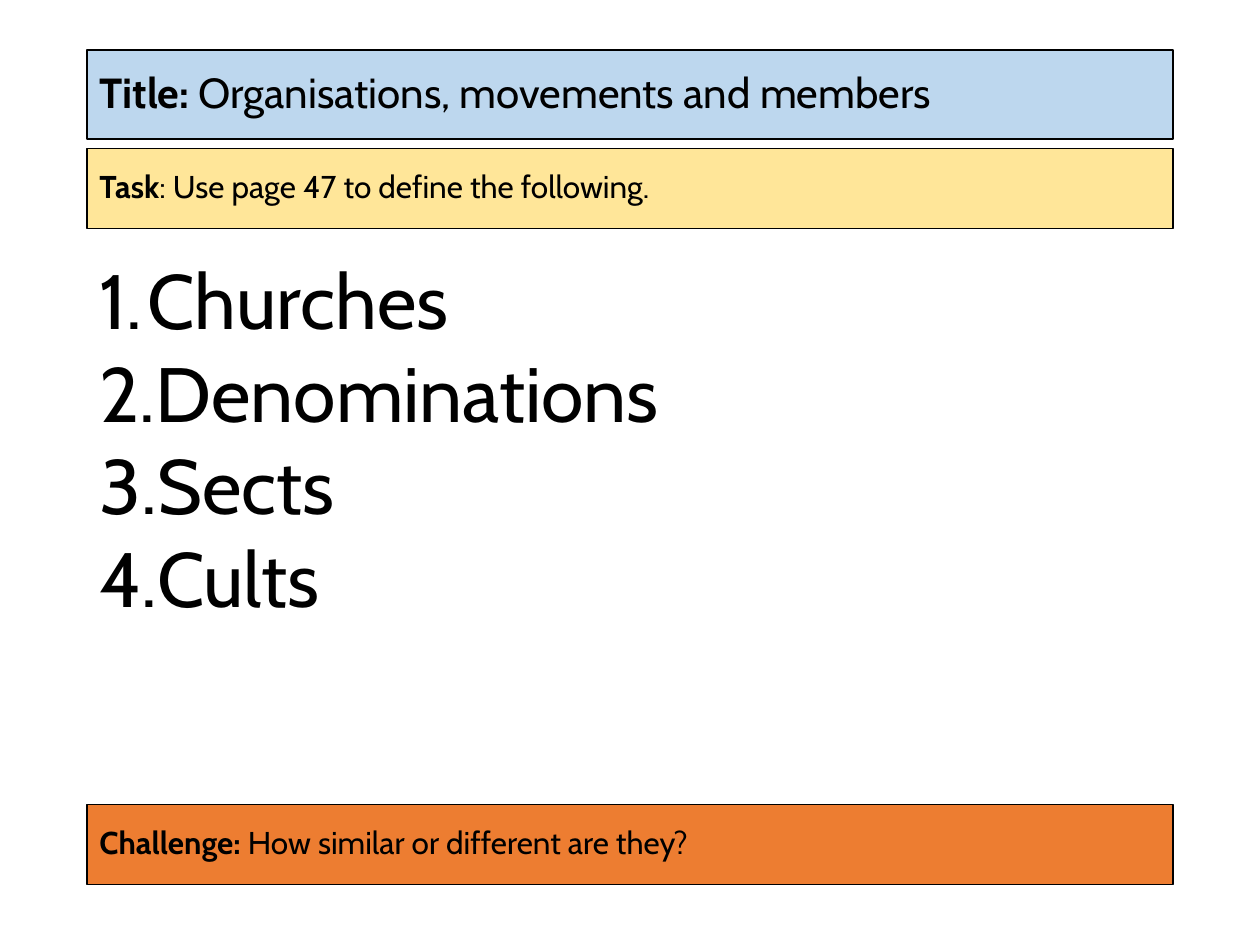
from pptx import Presentation
from pptx.dml.color import RGBColor
from pptx.enum.shapes import MSO_SHAPE as SHAPE
from pptx.enum.text import MSO_ANCHOR as ANCHOR, MSO_AUTO_SIZE as FIT, PP_ALIGN as ALIGN
from pptx.oxml.xmlchemy import OxmlElement
from pptx.util import Inches, Pt

WIDTH, HEIGHT = 10, 7.5


def rgb(code):
    return RGBColor.from_string(code)


def set_all(obj, values):
    for name, value in values.items():
        setattr(obj, name, value)


class Deck:
    font = "Cabin"
    ink = "000000"
    left, width = 0.069, 0.862
    indent = 0.38
    frame = dict(word_wrap=True, auto_size=FIT.NONE,
                 margin_left=Inches(0.1), margin_right=Inches(0.1),
                 margin_top=Inches(0.05), margin_bottom=Inches(0.05))
    para = dict(alignment=ALIGN.LEFT, space_before=Pt(0), space_after=Pt(0))

    def __init__(self):
        self.prs = Presentation()
        set_all(self.prs, dict(slide_width=Inches(WIDTH), slide_height=Inches(HEIGHT)))
        self.s = self.prs.slides.add_slide(self.prs.slide_layouts[1])

    def place(self, sp, top, height):
        set_all(sp, dict(left=Inches(self.left * WIDTH), top=Inches(top * HEIGHT),
                         width=Inches(self.width * WIDTH), height=Inches(height * HEIGHT)))

    def run(self, p, text, size, bold=False):
        r = p.add_run()
        r.text = text
        set_all(r.font, dict(name=self.font, size=Pt(size), bold=bold))
        r.font.color.rgb = rgb(self.ink)

    def banner(self, sp, top, height, fill, label, text, size):
        self.place(sp, top, height)
        sp.fill.solid()
        sp.fill.fore_color.rgb = rgb(fill)
        sp.line.color.rgb = rgb(self.ink)
        sp.line.width = Pt(0.75)
        tf = sp.text_frame
        set_all(tf, dict(self.frame, vertical_anchor=ANCHOR.MIDDLE))
        p = tf.paragraphs[0]
        set_all(p, dict(self.para, line_spacing=0.9))
        self.run(p, label, size, bold=True)
        self.run(p, text, size)

    def title(self, *args):
        self.banner(self.s.shapes.title, *args)

    def box(self, *args):
        sp = self.s.shapes.add_shape(SHAPE.RECTANGLE, 0, 0, 0, 0)
        sp.shadow.inherit = False
        self.banner(sp, *args)

    def numbers(self, top, height, items, size):
        sp = self.s.placeholders[1]
        self.place(sp, top, height)
        tf = sp.text_frame
        set_all(tf, dict(self.frame, vertical_anchor=ANCHOR.TOP))
        for i, item in enumerate(items):
            p = tf.add_paragraph() if i else tf.paragraphs[0]
            set_all(p, dict(self.para, line_spacing=1.0))
            self.run(p, item, size)
            self.number(p)

    def number(self, p):
        pPr = p._p.get_or_add_pPr()
        pPr.set("marL", str(Inches(self.indent)))
        pPr.set("indent", str(-Inches(self.indent)))
        for tag, key, value in (("a:buFont", "typeface", self.font),
                                ("a:buAutoNum", "type", "arabicPeriod")):
            el = OxmlElement(tag)
            el.set(key, value)
            pPr.append(el)


def main():
    deck = Deck()
    deck.title(0.053, 0.094, "BDD7EE", "Title: ", "Organisations, movements and members", 24)
    deck.box(0.157, 0.085, "FFE699", "Task", ": Use page 47 to define the following.", 18)
    deck.numbers(0.261, 0.463, ["Churches", "Denominations", "Sects", "Cults"], 44)
    deck.box(0.851, 0.085, "ED7D31", "Challenge: ", "How similar or different are they?", 18)
    deck.prs.save("out.pptx")


if __name__ == "__main__":
    main()
